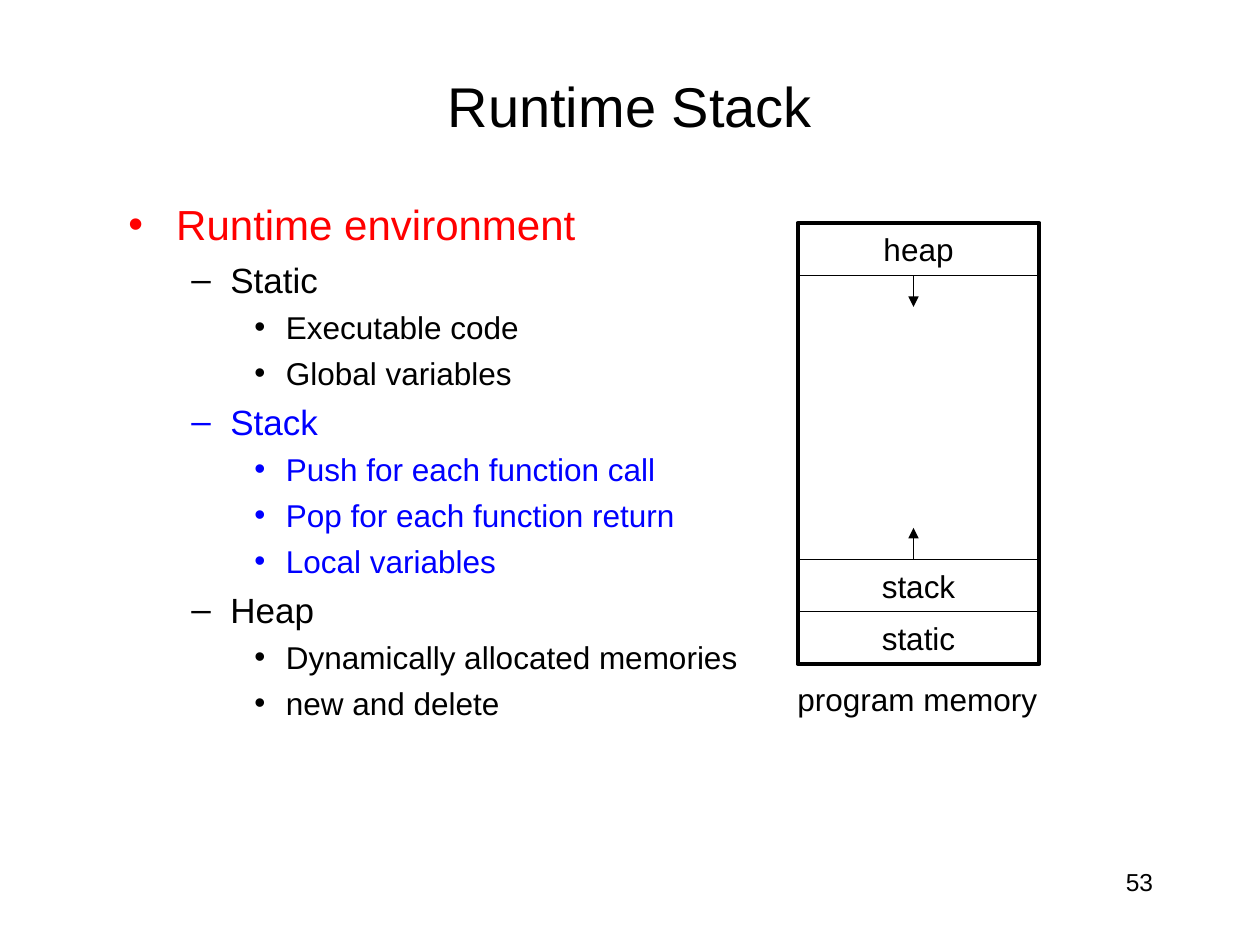
from lxml import etree
from pptx import Presentation
from pptx import util as u
from pptx.dml.color import RGBColor
from pptx.enum import shapes, text
from pptx.oxml.ns import qn

BLACK, RED, BLUE = "000000", "FF0000", "0000FF"
ALIGN = text.PP_ALIGN
LEVELS = [(24, "•", 0.38, 0.38), (20, "–", 0.81, 0.31), (18, "•", 1.25, 0.25)]
POINTS = [
    (0, RED, "Runtime environment"),
    (1, BLACK, "Static"),
    (2, BLACK, "Executable code"),
    (2, BLACK, "Global variables"),
    (1, BLUE, "Stack"),
    (2, BLUE, "Push for each function call"),
    (2, BLUE, "Pop for each function return"),
    (2, BLUE, "Local variables"),
    (1, BLACK, "Heap"),
    (2, BLACK, "Dynamically allocated memories"),
    (2, BLACK, "new and delete"),
]


def color(code):
    return RGBColor.from_string(code)


def assign(item, values):
    for name, value in values.items():
        setattr(item, name, value)


def inches(box):
    return [u.Inches(n) for n in box]


def write(para, words, size, code=BLACK, align=ALIGN.LEFT):
    para.text = words
    para.alignment = align
    assign(para.font, {"name": "Arial", "size": u.Pt(size), "bold": False})
    para.font.color.rgb = color(code)


def label(slide, box, words, size, align, wrap=True):
    frame = slide.shapes.add_textbox(*inches(box)).text_frame
    frame.word_wrap = wrap
    write(frame.paragraphs[0], words, size, align=align)


def heading(slide, box, words):
    title = slide.shapes.title
    assign(title, dict(zip(("left", "top", "width", "height"), inches(box))))
    title.text_frame.vertical_anchor = text.MSO_ANCHOR.MIDDLE
    write(title.text_frame.paragraphs[0], words, 32, align=ALIGN.CENTER)


def outline(slide, box):
    frame = slide.shapes.add_textbox(*inches(box)).text_frame
    frame.word_wrap = True
    for i, (level, code, words) in enumerate(POINTS):
        size, mark, left, hang = LEVELS[level]
        para = frame.add_paragraph() if i else frame.paragraphs[0]
        para.level = level
        para.space_before = u.Pt(size / 4 if i else 0)
        props = para._p.get_or_add_pPr()
        props.set("marL", str(u.Inches(left)))
        props.set("indent", str(-u.Inches(hang)))
        etree.SubElement(props, qn("a:buFont")).set("typeface", "Arial")
        etree.SubElement(props, qn("a:buChar")).set("char", mark)
        write(para, words, size, code)


def block(slide, box, weight, words=""):
    rect = slide.shapes.add_shape(shapes.MSO_SHAPE.RECTANGLE, *inches(box))
    rect.shadow.inherit = False
    rect.fill.background()
    rect.line.color.rgb = color(BLACK)
    rect.line.width = u.Pt(weight)
    if words:
        rect.text_frame.vertical_anchor = text.MSO_ANCHOR.MIDDLE
        write(rect.text_frame.paragraphs[0], words, 18, align=ALIGN.CENTER)


def arrow(slide, x, start, end):
    line = slide.shapes.add_connector(
        shapes.MSO_CONNECTOR.STRAIGHT, *inches((x, start, x, end)))
    line.line.color.rgb = color(BLACK)
    line.line.width = u.Pt(0.75)
    etree.SubElement(line.line._get_or_add_ln(), qn("a:tailEnd")).set("type", "triangle")
    etree.SubElement(line._element.spPr, qn("a:effectLst"))


def memory(slide, box):
    left, top, width, height = box
    row, reach = 0.415, 0.25
    base = top + height
    stack = base - 2 * row
    block(slide, box, 2.25)
    for y, words in ((base - row, "static"), (stack, "stack"), (top, "heap")):
        block(slide, (left, y, width, row), 0.75, words)
    x = left + width / 2 - 0.04
    arrow(slide, x, stack, stack - reach)
    arrow(slide, x, top + row, top + row + reach)
    label(slide, (left - 0.1, base + 0.08, width + 0.18, 0.4),
          "program memory", 18, ALIGN.LEFT, False)


def main():
    deck = Presentation()
    assign(deck, {"slide_width": u.Inches(10), "slide_height": u.Inches(7.5)})
    slide = deck.slides.add_slide(deck.slide_layouts[5])
    heading(slide, (0.75, 0.42, 8.5, 0.83), "Runtime Stack")
    outline(slide, (0.92, 1.53, 7.35, 4.92))
    memory(slide, (6.33, 1.77, 1.92, 3.5))
    label(slide, (7.17, 6.83, 2.08, 0.5), "53", 14, ALIGN.RIGHT)
    deck.save("out.pptx")


if __name__ == "__main__":
    main()
